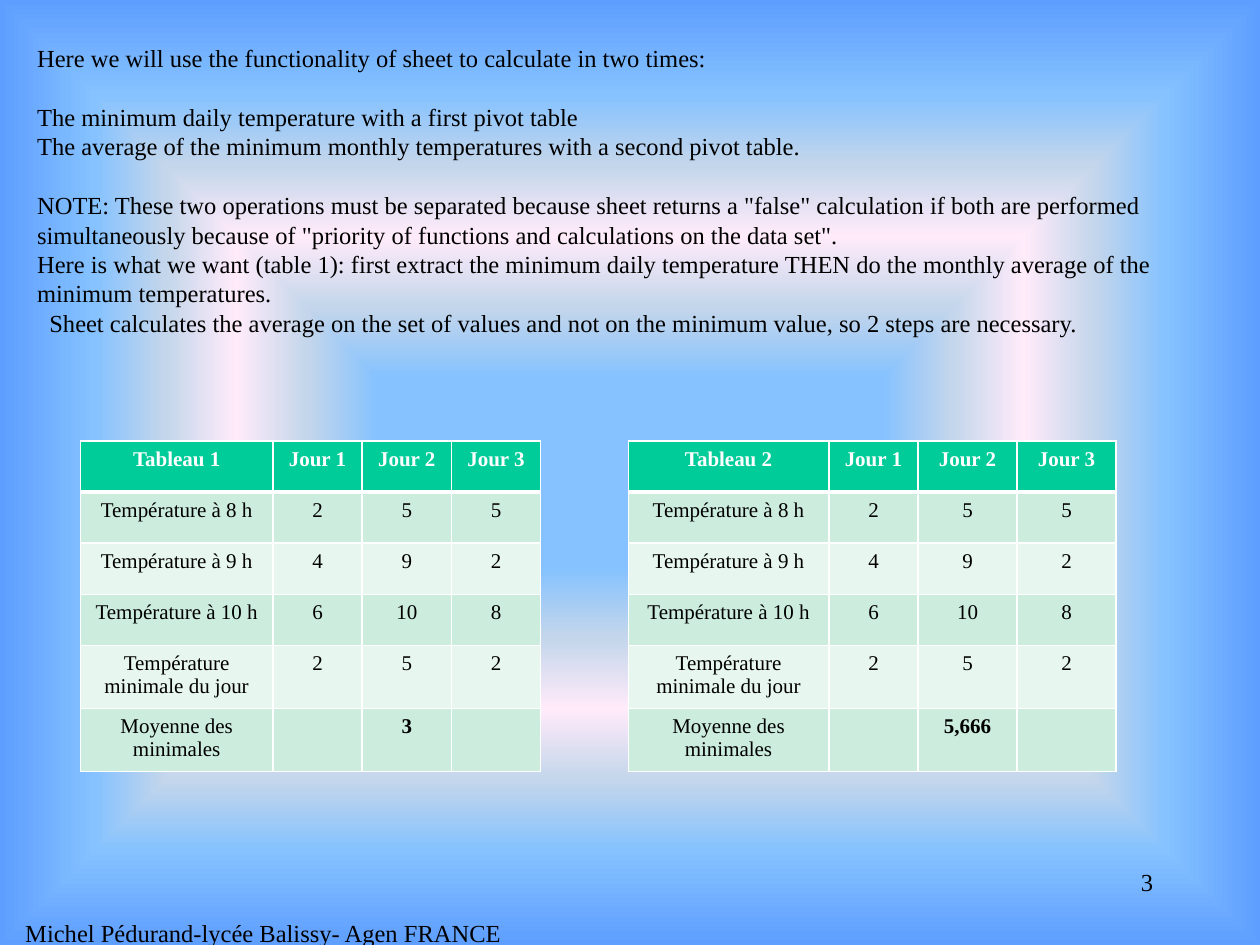
from lxml import etree
from pptx import Presentation
from pptx.dml.color import RGBColor
from pptx.enum import text as t
from pptx.oxml import ns
from pptx.util import Pt

BLACK = RGBColor(0x00, 0x00, 0x00)
WHITE = RGBColor(0xFF, 0xFF, 0xFF)
GREEN = RGBColor(0x00, 0xCC, 0x99)
MINT = RGBColor(0xCC, 0xEC, 0xDE)
PALE_MINT = RGBColor(0xE7, 0xF6, 0xEF)
SKY = RGBColor(0x85, 0xC2, 0xFF)
MIST = RGBColor(0xC4, 0xD6, 0xEB)
ROSE = RGBColor(0xFF, 0xEB, 0xFA)
BLUE = RGBColor(0x5E, 0x9E, 0xFF)

GLOW = [(20, SKY), (35, MIST), (50, ROSE), (65, MIST), (80, SKY), (100, BLUE)]
LINE = 16.8

EXPLANATION = [
    ("Here we will use the functionality of sheet to calculate in two times:", 0, 0),
    ("The minimum daily temperature with a first pivot table", LINE, 0),
    ("The average of the minimum monthly temperatures with a second pivot table.", 0, 0),
    ('NOTE: These two operations must be separated because sheet returns a "false" '
     'calculation if both are performed simultaneously because of "priority of '
     'functions and calculations on the data set".', LINE, 0),
    ("Here is what we want (table 1): first extract the minimum daily temperature THEN "
     "do the monthly average of the minimum temperatures.", 0, 0),
    ("Sheet calculates the average on the set of values and not on the minimum value, "
     "so 2 steps are necessary.", 0, 7),
]

READINGS = [
    ("Température à 8 h", "2", "5", "5"),
    ("Température à 9 h", "4", "9", "2"),
    ("Température à 10 h", "6", "10", "8"),
    ("Température minimale du jour", "2", "5", "2"),
]


def child(parent, tag, **attributes):
    return etree.SubElement(parent, ns.qn(tag), attributes)


class TemperatureSlide:
    font = "Times New Roman"
    text_size = 14
    table_size = 12
    row_height = 29.2

    def __init__(self, slide):
        self.slide = slide

    def background(self, stops):
        self.slide.background.fill.gradient()
        gradient = self.slide.element.find(".//" + ns.qn("a:gradFill"))
        for part in list(gradient):
            gradient.remove(part)
        stop_list = child(gradient, "a:gsLst")
        for position, color in stops:
            stop = child(stop_list, "a:gs", pos=str(position * 1000))
            child(stop, "a:srgbClr", val=str(color))
        path = child(gradient, "a:path", path="shape")
        child(path, "a:fillToRect", l="50000", t="50000", r="50000", b="50000")

    def run(self, paragraph, wording, size, color=BLACK, bold=False):
        run = paragraph.add_run()
        run.text = wording
        run.font.name = self.font
        run.font.size = Pt(size)
        run.font.bold = bold
        run.font.color.rgb = color

    def body(self, left, top, width, height, paragraphs):
        body = self.slide.placeholders[1]
        body.left, body.top = Pt(left), Pt(top)
        body.width, body.height = Pt(width), Pt(height)
        frame = body.text_frame
        frame.word_wrap = True
        frame.auto_size = t.MSO_AUTO_SIZE.SHAPE_TO_FIT_TEXT
        frame.vertical_anchor = t.MSO_ANCHOR.TOP
        for index, (wording, gap, indent) in enumerate(paragraphs):
            paragraph = frame.add_paragraph() if index else frame.paragraphs[0]
            paragraph.space_before = Pt(gap)
            paragraph.alignment = t.PP_ALIGN.LEFT
            self.run(paragraph, wording, self.text_size)
            properties = paragraph._p.get_or_add_pPr()
            properties.set("marL", "0")
            properties.set("indent", str(Pt(indent)))
            child(properties, "a:buNone")

    def label(self, left, top, width, height, wording, alignment, inset=3.6):
        box = self.slide.shapes.add_textbox(Pt(left), Pt(top), Pt(width), Pt(height))
        frame = box.text_frame
        frame.word_wrap = True
        frame.margin_top = Pt(inset)
        paragraph = frame.paragraphs[0]
        paragraph.alignment = alignment
        self.run(paragraph, wording, self.text_size)

    def borders(self, cell, **widths):
        properties = cell._tc.get_or_add_tcPr()
        for side in "LRTB":
            line = child(properties, "a:ln" + side, w=str(Pt(widths.get(side, 1))))
            child(child(line, "a:solidFill"), "a:srgbClr", val=str(WHITE))

    def table(self, left, top, widths, title, average):
        rows = [(title, "Jour 1", "Jour 2", "Jour 3"), *READINGS,
                ("Moyenne des minimales", "", average, "")]
        table = self.slide.shapes.add_table(
            len(rows), len(widths), Pt(left), Pt(top),
            Pt(sum(widths)), Pt(self.row_height * len(rows))).table
        for column, width in zip(table.columns, widths):
            column.width = Pt(width)
        for r, values in enumerate(rows):
            table.rows[r].height = Pt(self.row_height)
            for c, value in enumerate(values):
                cell = table.cell(r, c)
                self.borders(cell, T=3 if r == 1 else 1, B=1 if r else 3)
                cell.fill.solid()
                cell.fill.fore_color.rgb = (MINT if r % 2 else PALE_MINT) if r else GREEN
                paragraph = cell.text_frame.paragraphs[0]
                paragraph.alignment = t.PP_ALIGN.CENTER
                paragraph.font.size = Pt(self.table_size)
                if value:
                    bold = r == 0 or (r == len(rows) - 1 and c > 0)
                    self.run(paragraph, value, self.table_size, BLACK if r else WHITE, bold)


def main():
    deck = Presentation()
    deck.slide_width, deck.slide_height = Pt(720), Pt(540)
    slide = deck.slides.add_slide(deck.slide_layouts[1])
    title = slide.shapes.title.element
    title.getparent().remove(title)

    page = TemperatureSlide(slide)
    page.background(GLOW)
    page.label(516, 492, 150, 36, "3", t.PP_ALIGN.RIGHT)
    page.body(14, 21, 658, 177, EXPLANATION)
    page.table(46, 252, [110, 51, 51, 51], "Tableau 1", "3")
    page.table(359, 252, [114.7, 50.9, 56.6, 56.6], "Tableau 2", "5,666")
    page.label(0, 504, 301, 36, "Michel Pédurand-lycée Balissy- Agen FRANCE",
               t.PP_ALIGN.CENTER, inset=3.6 + LINE)
    deck.save("out.pptx")


if __name__ == "__main__":
    main()
